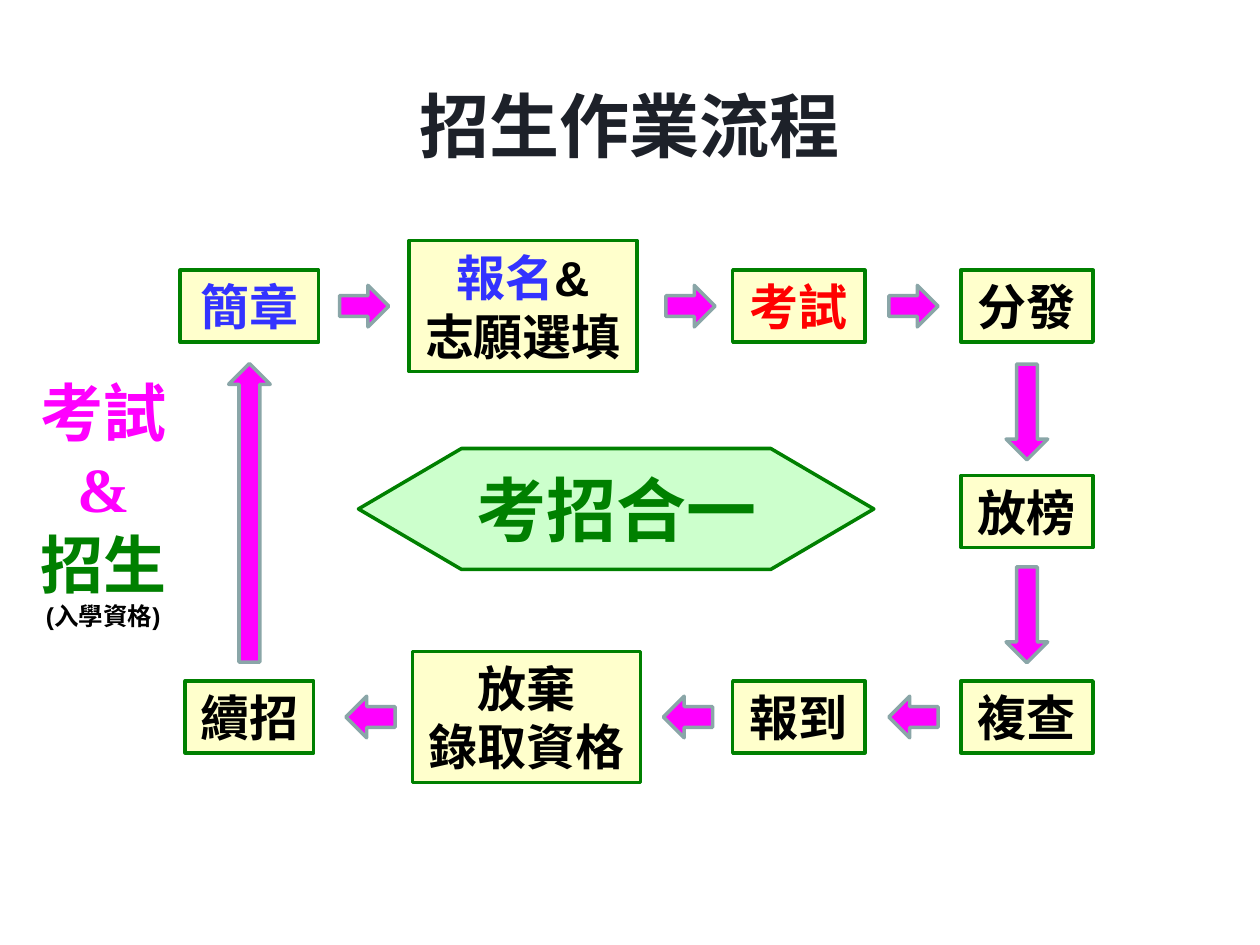
from pptx import Presentation
from pptx import util as u
from pptx.dml.color import RGBColor
from pptx.enum import shapes, text

BLACK, BLUE, RED = "000000", "3333FF", "FF0000"
GREEN, MAGENTA = "008000", "FF00FF"


def write(shape, lines, wrap=False):
    frame = shape.text_frame
    frame.word_wrap = wrap
    frame.vertical_anchor = text.MSO_ANCHOR.MIDDLE
    for index, line in enumerate(lines):
        paragraph = frame.paragraphs[0] if index == 0 else frame.add_paragraph()
        paragraph.alignment = text.PP_ALIGN.CENTER
        for words, size, color, font in line:
            run = paragraph.add_run()
            run.text = words
            run.font.size = u.Pt(size)
            run.font.bold = True
            run.font.name = font
            run.font.color.rgb = RGBColor.from_string(color)


def draw(kind, center_x, center_y, width, height, fill, line):
    shape = slide.shapes.add_shape(
        kind, u.Inches(center_x - width / 2), u.Inches(center_y - height / 2),
        u.Inches(width), u.Inches(height))
    shape.shadow.inherit = False
    shape.fill.solid()
    shape.fill.fore_color.rgb = RGBColor.from_string(fill)
    shape.line.color.rgb = RGBColor.from_string(line)
    shape.line.width = u.Pt(2)
    return shape


presentation = Presentation()
presentation.slide_width = u.Inches(10)
presentation.slide_height = u.Inches(7.5)
slide = presentation.slides.add_slide(presentation.slide_layouts[5])

title = slide.shapes.title
title.left, title.top = u.Inches(1.02), u.Inches(0.6)
title.width, title.height = u.Inches(7.95), u.Inches(0.77)
write(title, [[("招生作業流程", 40, "1D2129", "Arial")]], wrap=True)

top, middle, bottom = 2.43, 4.06, 5.69
steps = [
    (1.98, top, 1.1, [[("簡章", BLUE)]]),
    (4.15, top, 1.81, [[("報名", BLUE), ("&", BLACK)], [("志願選填", BLACK)]]),
    (6.34, top, 1.05, [[("考試", RED)]]),
    (8.15, top, 1.05, [[("分發", BLACK)]]),
    (8.15, middle, 1.05, [[("放榜", BLACK)]]),
    (8.15, bottom, 1.05, [[("複查", BLACK)]]),
    (6.34, bottom, 1.05, [[("報到", BLACK)]]),
    (4.18, bottom, 1.81, [[("放棄", BLACK)], [("錄取資格", BLACK)]]),
    (1.98, bottom, 1.02, [[("續招", BLACK)]]),
]
for x, y, width, lines in steps:
    height = 0.57 if len(lines) == 1 else 1.04
    box = draw(shapes.MSO_SHAPE.RECTANGLE, x, y, width, height, "FFFFCC", GREEN)
    write(box, [[(words, 28, color, "Arial") for words, color in line] for line in lines])

arrows = [
    (2.89, top, 0.39, 0), (5.48, top, 0.39, 0), (7.25, top, 0.39, 0),
    (8.15, 3.27, 0.76, 90), (8.15, 4.88, 0.76, 90),
    (7.25, bottom, 0.39, 180), (5.46, bottom, 0.39, 180), (2.94, bottom, 0.39, 180),
    (1.98, 4.07, 2.37, 270),
]
for x, y, length, rotation in arrows:
    arrow = draw(shapes.MSO_SHAPE.RIGHT_ARROW, x, y, length, 0.33, MAGENTA, "8AA6A8")
    arrow.rotation = rotation

side_label = slide.shapes.add_textbox(
    u.Inches(0.17), u.Inches(2.91), u.Inches(1.3), u.Inches(2.15))
write(side_label, [
    [("考試", 36, MAGENTA, "Noto Sans CJK SC")],
    [("&", 36, MAGENTA, "Times New Roman")],
    [("招生", 36, GREEN, "Noto Sans CJK SC")],
    [("(入學資格)", 14, BLACK, "Arial")],
], wrap=True)

center = draw(shapes.MSO_SHAPE.FLOWCHART_PREPARATION, 4.89, 4.04, 4.09, 0.96, "CCFFCC", GREEN)
write(center, [[("考招合一", 40, GREEN, "Arial")]])

presentation.save("out.pptx")
